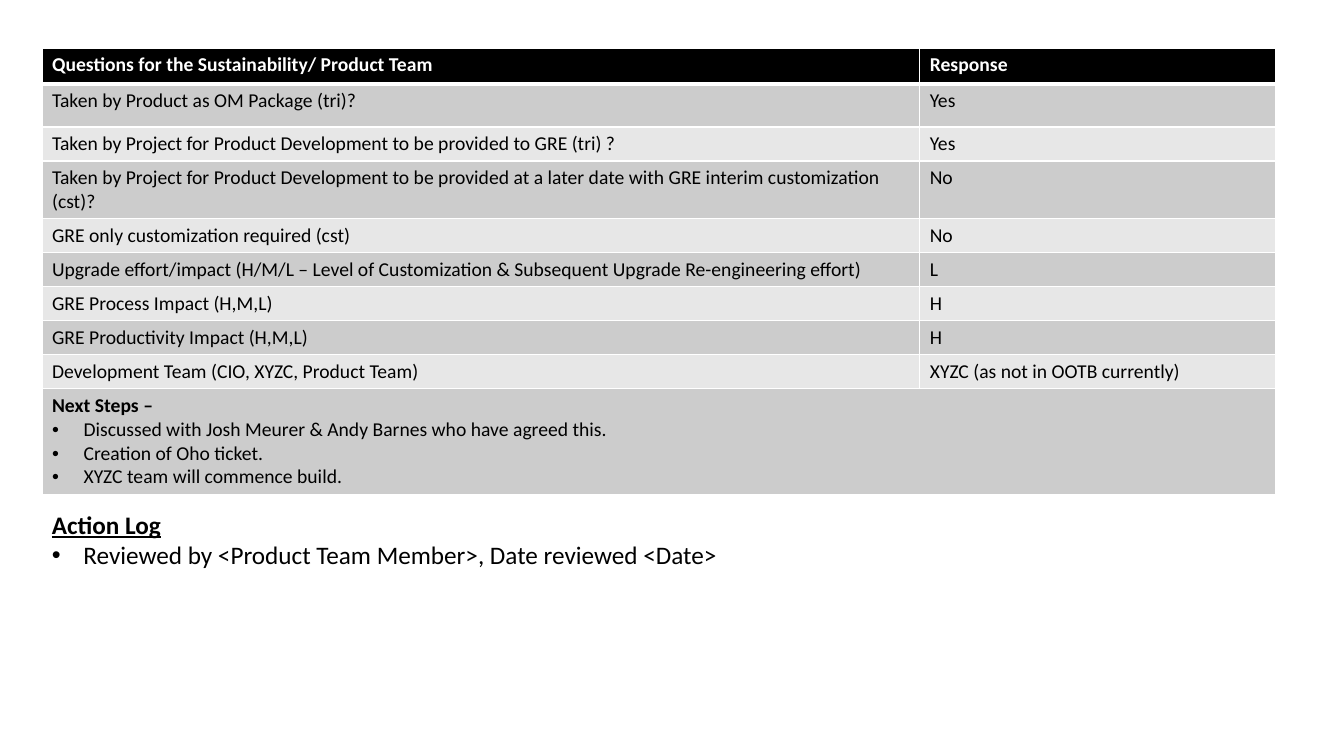
from dataclasses import dataclass

from lxml import etree
from pptx import Presentation
from pptx import util as u
from pptx.dml.color import RGBColor
from pptx.enum import text
from pptx.oxml import ns

EMU_PER_PX = 9525
BLACK = RGBColor(0x00, 0x00, 0x00)
WHITE = RGBColor(0xFF, 0xFF, 0xFF)
DARK_BAND = RGBColor(0xCC, 0xCC, 0xCC)
LIGHT_BAND = RGBColor(0xE7, 0xE7, 0xE7)

TABLE_FONT = {"name": "Calibri", "size": u.Pt(14), "bold": False}
LOG_FONT = {"name": "Calibri", "size": u.Pt(18), "bold": False}
HEADING = {"bold": True}
LOG_HEADING = {"bold": True, "underline": True}
BULLET_INDENT = 30


@dataclass
class Line:
    """One paragraph of text with its format."""
    words: str
    style: dict
    color: RGBColor = BLACK
    bullet: bool = False


@dataclass
class Row:
    """One question with its response."""
    question: str
    response: str
    height: int = 32


HEADER = Row("Questions for the Sustainability/ Product Team", "Response", 34)
QUESTIONS = [
    Row("Taken by Product as OM Package (tri)?", "Yes", 41),
    Row("Taken by Project for Product Development to be provided to GRE (tri) ?", "Yes"),
    Row("Taken by Project for Product Development to be provided at a later date "
        "with GRE interim customization (cst)?", "No", 55),
    Row("GRE only customization required (cst)", "No"),
    Row("Upgrade effort/impact (H/M/L – Level of Customization & Subsequent "
        "Upgrade Re-engineering effort)", "L"),
    Row("GRE Process Impact (H,M,L)", "H"),
    Row("GRE Productivity Impact (H,M,L)", "H"),
    Row("Development Team (CIO, XYZC, Product Team)", "XYZC (as not in OOTB currently)"),
]
NEXT_STEPS = [Line("Next Steps –", TABLE_FONT | HEADING)] + [
    Line(step, TABLE_FONT, bullet=True) for step in (
        "Discussed with Josh Meurer & Andy Barnes who have agreed this.",
        "Creation of Oho ticket.",
        "XYZC team will commence build.",
    )
]
NEXT_STEPS_HEIGHT = 99
ACTION_LOG = [
    Line("Action Log", LOG_FONT | LOG_HEADING),
    Line("Reviewed by <Product Team Member>, Date reviewed <Date>", LOG_FONT, bullet=True),
]
COLUMN_WIDTHS = (836, 339)


def px(length: int) -> u.Emu:
    return u.Emu(length * EMU_PER_PX)


def add_bullet(para) -> None:
    props = para._p.get_or_add_pPr()
    props.set("marL", str(px(BULLET_INDENT)))
    props.set("indent", str(px(-BULLET_INDENT)))
    etree.SubElement(props, ns.qn("a:buFont")).set("typeface", "Arial")
    etree.SubElement(props, ns.qn("a:buChar")).set("char", "•")


def write(frame, lines: list[Line]) -> None:
    for index, line in enumerate(lines):
        para = frame.add_paragraph() if index else frame.paragraphs[0]
        if line.bullet:
            add_bullet(para)
        span = para.add_run()
        span.text = line.words
        for name, value in line.style.items():
            setattr(span.font, name, value)
        span.font.color.rgb = line.color


def paint_cell(cell, fill: RGBColor, top: int, bottom: int) -> None:
    """Draw white borders (in points), then the fill."""
    props = cell._tc.get_or_add_tcPr()
    for side, width in {"L": 1, "R": 1, "T": top, "B": bottom}.items():
        edge = etree.SubElement(props, ns.qn(f"a:ln{side}"), w=str(u.Pt(width)))
        solid = etree.SubElement(edge, ns.qn("a:solidFill"))
        etree.SubElement(solid, ns.qn("a:srgbClr")).set("val", str(WHITE))
    cell.fill.solid()
    cell.fill.fore_color.rgb = fill


def add_questions(page) -> None:
    rows = [HEADER, *QUESTIONS]
    heights = [row.height for row in rows] + [NEXT_STEPS_HEIGHT]
    table = page.shapes.add_table(
        len(heights), len(COLUMN_WIDTHS), px(40), px(46),
        px(sum(COLUMN_WIDTHS)), px(sum(heights))).table
    for column, width in zip(table.columns, COLUMN_WIDTHS):
        column.width = px(width)

    # Bands and borders, with a thick line under the header
    for index, height in enumerate(heights):
        table.rows[index].height = px(height)
        fill = DARK_BAND if index % 2 else LIGHT_BAND
        for cell in table.rows[index].cells:
            paint_cell(cell, fill if index else BLACK,
                       top=3 if index == 1 else 1, bottom=1 if index else 3)

    # Questions and responses
    for index, row in enumerate(rows):
        style, color = (TABLE_FONT, BLACK) if index else (TABLE_FONT | HEADING, WHITE)
        for cell, words in zip(table.rows[index].cells, (row.question, row.response)):
            write(cell.text_frame, [Line(words, style, color)])

    # Next steps across both columns
    last = len(rows)
    steps = table.cell(last, 0)
    steps.merge(table.cell(last, 1))
    write(steps.text_frame, NEXT_STEPS)


def add_action_log(page) -> None:
    box = page.shapes.add_textbox(px(40), px(480), px(915), px(68))
    frame_format = {"word_wrap": True, "auto_size": text.MSO_AUTO_SIZE.SHAPE_TO_FIT_TEXT}
    for name, value in frame_format.items():
        setattr(box.text_frame, name, value)
    write(box.text_frame, ACTION_LOG)


def main() -> None:
    deck = Presentation()
    deck.slide_width, deck.slide_height = px(1280), px(720)
    page = deck.slides.add_slide(deck.slide_layouts[6])
    add_questions(page)
    add_action_log(page)
    deck.save("out.pptx")


if __name__ == "__main__":
    main()
